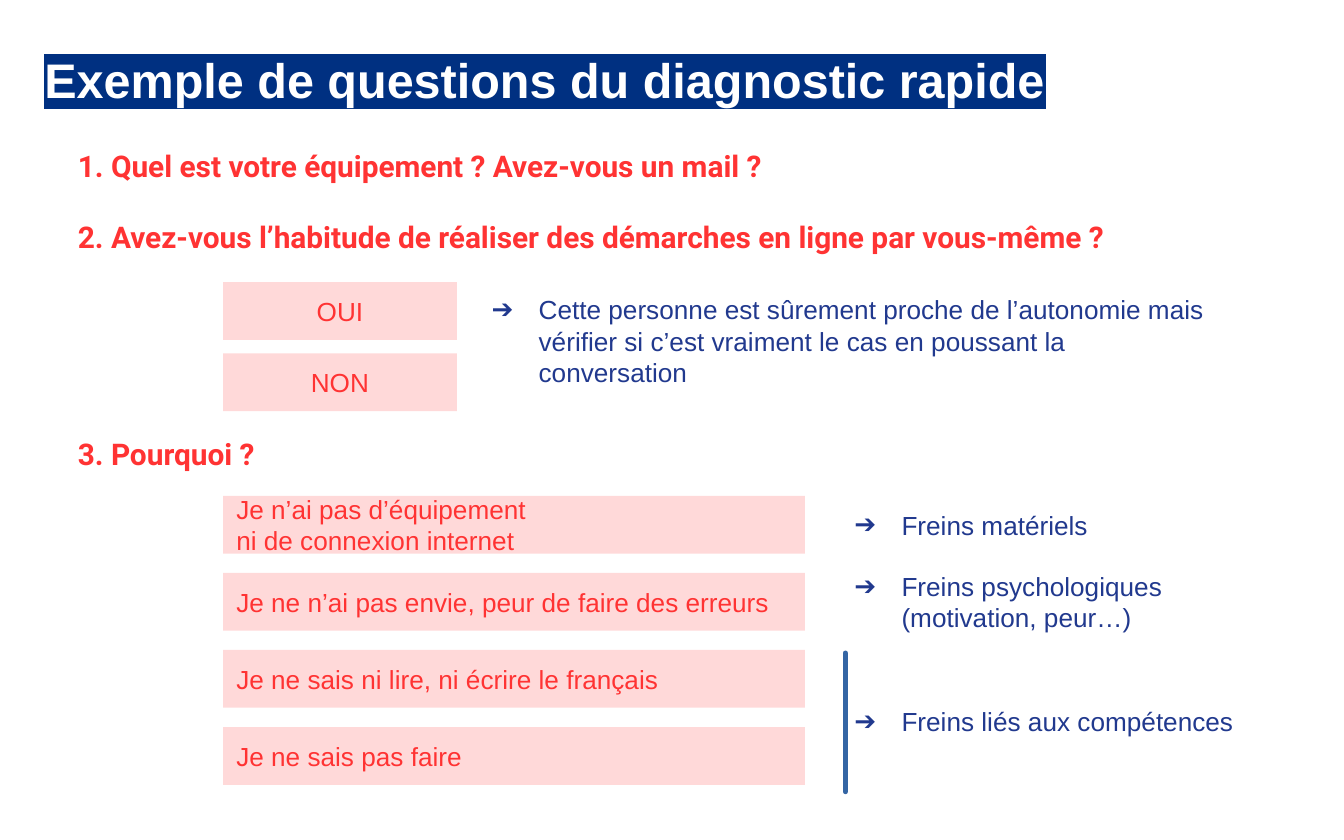
import dataclasses

import lxml.etree
import pptx
import pptx.dml.color
import pptx.enum.shapes
import pptx.enum.text
import pptx.oxml.ns
import pptx.util

Inches = pptx.util.Inches
Pt = pptx.util.Pt
RGB = pptx.dml.color.RGBColor.from_string
ALIGN = pptx.enum.text.PP_ALIGN
ANCHOR = pptx.enum.text.MSO_ANCHOR
qn = pptx.oxml.ns.qn


@dataclasses.dataclass(frozen=True)
class Theme:
    white: str = "FFFFFF"
    navy: str = "003081"
    red: str = "FF3333"
    pink: str = "FFD9D9"
    blue: str = "21398E"
    rule: str = "3465A4"
    title_size: int = 26
    question_size: int = 16
    body_size: int = 14
    body_font: str = "Arial"
    question_font: str = "Roboto"


class SlideBuilder:
    def __init__(self, slide, theme):
        self.s = slide
        self.theme = theme

    def put_text(self, sp, paragraphs, size, color, font, margins,
                 bold=False, align=ALIGN.LEFT, anchor=ANCHOR.TOP, gap=0):
        """Fill a shape with paragraphs; margins are left, top, right, bottom."""
        tf = sp.text_frame
        frame_format = {"word_wrap": True, "vertical_anchor": anchor}
        sides = ("margin_left", "margin_top", "margin_right", "margin_bottom")
        frame_format.update(zip(sides, map(Inches, margins)))
        for name, value in frame_format.items():
            setattr(tf, name, value)
        for i, text in enumerate(paragraphs):
            p = tf.add_paragraph() if i else tf.paragraphs[0]
            p.alignment = align
            if i and gap:
                p.space_before = Pt(gap)
            r = p.add_run()
            r.text = text
            run_format = {"size": Pt(size), "bold": bold, "name": font}
            for name, value in run_format.items():
                setattr(r.font, name, value)
            r.font.color.rgb = RGB(color)
        return tf

    def textbox(self, x, y, w, h):
        return self.s.shapes.add_textbox(Inches(x), Inches(y), Inches(w), Inches(h))

    def title(self, text, x, y, w, h):
        t = self.theme
        tf = self.put_text(self.textbox(x, y, w, h), [text], t.title_size, t.white,
                           t.body_font, (0.04,) * 4, bold=True)
        rPr = tf.paragraphs[0].runs[0]._r.get_or_add_rPr()
        highlight = lxml.etree.Element(qn("a:highlight"))
        lxml.etree.SubElement(highlight, qn("a:srgbClr"), val=t.navy)
        rPr.find(qn("a:solidFill")).addnext(highlight)

    def questions(self, texts, x, y, w, h, gap=0):
        t = self.theme
        self.put_text(self.textbox(x, y, w, h), texts, t.question_size, t.red,
                      t.question_font, (0.01, 0.01, 0, 0), bold=True, gap=gap)

    def answer(self, lines, x, y, w, h, align=ALIGN.LEFT):
        t = self.theme
        sp = self.s.shapes.add_shape(pptx.enum.shapes.MSO_SHAPE.RECTANGLE,
                                     Inches(x), Inches(y), Inches(w), Inches(h))
        sp.shadow.inherit = False
        sp.fill.solid()
        sp.fill.fore_color.rgb = RGB(t.pink)
        sp.line.fill.background()
        self.put_text(sp, lines, t.body_size, t.red, t.body_font, (0.1,) * 4,
                      align=align, anchor=ANCHOR.MIDDLE)

    def conclusion(self, text, x, y, w, h):
        """Add a text with an arrow bullet."""
        t = self.theme
        tf = self.put_text(self.textbox(x, y, w, h), [text], t.body_size, t.blue,
                           t.body_font, (0.1,) * 4, anchor=ANCHOR.MIDDLE)
        pPr = tf.paragraphs[0]._p.get_or_add_pPr()
        pPr.set("marL", str(Inches(0.5)))
        pPr.set("indent", str(Inches(-0.35)))
        color = lxml.etree.SubElement(pPr, qn("a:buClr"))
        lxml.etree.SubElement(color, qn("a:srgbClr"), val=t.blue)
        lxml.etree.SubElement(pPr, qn("a:buFont"), typeface=t.body_font)
        lxml.etree.SubElement(pPr, qn("a:buChar"), char="➔")

    def vertical_rule(self, x, top, bottom):
        line = self.s.shapes.add_connector(
            pptx.enum.shapes.MSO_CONNECTOR.STRAIGHT,
            Inches(x), Inches(top), Inches(x), Inches(bottom))
        line.line.color.rgb = RGB(self.theme.rule)
        line.line.width = Pt(2.83)
        spPr = line._element.spPr
        spPr.find(qn("a:ln")).set("cap", "rnd")
        lxml.etree.SubElement(spPr, qn("a:effectLst"))


def main():
    prs = pptx.Presentation()
    prs.slide_width, prs.slide_height = Inches(10), Inches(6.25)
    b = SlideBuilder(prs.slides.add_slide(prs.slide_layouts[6]), Theme())
    question_x, answer_x, brake_x = 0.57, 1.66, 6.11
    row_h = 0.43

    b.title("Exemple de questions du diagnostic rapide", 0.29, 0.33, 8.61, 0.56)
    b.questions(["1. Quel est votre équipement ? Avez-vous un mail ?",
                 "2. Avez-vous l’habitude de réaliser des démarches en ligne par vous-même ?"],
                question_x, 1.09, 9.27, 0.9, gap=19)
    for i, text in enumerate(["OUI", "NON"]):
        b.answer([text], answer_x, 2.1 + 0.53 * i, 1.74, row_h, ALIGN.CENTER)
    b.conclusion("Cette personne est sûrement proche de l’autonomie mais vérifier "
                 "si c’est vraiment le cas en poussant la conversation",
                 3.41, 2.32, 5.77, row_h)

    b.questions(["3. Pourquoi ?"], question_x, 3.23, 7.6, 0.31)
    reasons = [
        ["Je n’ai pas d’équipement", "ni de connexion internet"],
        ["Je ne n’ai pas envie, peur de faire des erreurs"],
        ["Je ne sais ni lire, ni écrire le français"],
        ["Je ne sais pas faire"],
    ]
    first_y, last_y = 3.69, 5.41
    pitch = (last_y - first_y) / (len(reasons) - 1)
    for i, lines in enumerate(reasons):
        b.answer(lines, answer_x, first_y + pitch * i, 4.33, row_h)

    brakes = [("Freins matériels", 0),
              ("Freins psychologiques (motivation, peur…)", 1),
              ("Freins liés aux compétences", 2.55)]
    for text, row in brakes:
        b.conclusion(text, brake_x, first_y + pitch * row, 3.53, row_h)
    b.vertical_rule(6.29, 4.86, 5.89)

    prs.save("out.pptx")


if __name__ == "__main__":
    main()
